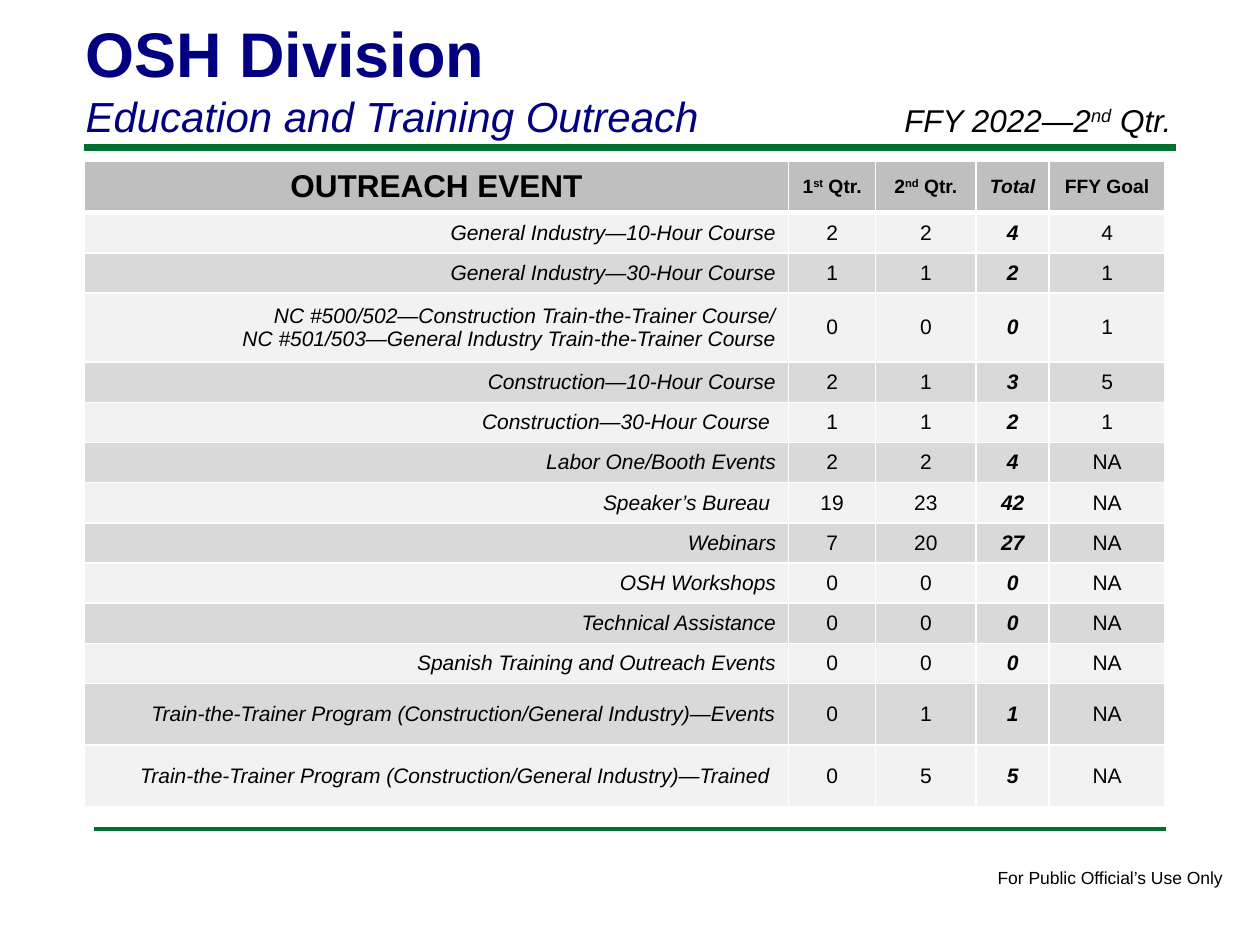
import dataclasses

import pptx
import pptx.dml.color
import pptx.enum.shapes
import pptx.enum.text
import pptx.oxml
import pptx.oxml.ns
import pptx.util

Cm, Pt = pptx.util.Cm, pptx.util.Pt
Align, Anchor = pptx.enum.text.PP_ALIGN, pptx.enum.text.MSO_ANCHOR
GROW = pptx.enum.text.MSO_AUTO_SIZE.SHAPE_TO_FIT_TEXT


@dataclasses.dataclass(frozen=True)
class Theme:
    """Colours, font and type sizes of the deck."""
    font: str = "Arial"
    ink: str = "000000"
    navy: str = "000080"
    green: str = "007030"
    border: str = "FFFFFF"
    header: str = "BFBFBF"
    bands: tuple = ("F2F2F2", "D9D9D9")
    title: int = 36
    subtitle: int = 24
    heading: int = 18
    body: int = 12
    column: int = 11
    footer: int = 10


THEME = Theme()
COLUMNS = (14.2, 1.75, 2.03, 1.47, 2.34)
HEADER_HEIGHT, ROW_HEIGHT, DOUBLE_HEIGHT, PROGRAM_HEIGHT = 1.04, 0.81, 1.39, 1.24
HEADINGS = ("OUTREACH EVENT", "1^st^ Qtr.", "2^nd^ Qtr.", "Total", "FFY Goal")
EVENTS = (
    ("General Industry—10-Hour Course", 2, 2, 4, 4),
    ("General Industry—30-Hour Course", 1, 1, 2, 1),
    ("NC #500/502—Construction Train-the-Trainer Course/\n"
     "NC #501/503—General Industry Train-the-Trainer Course", 0, 0, 0, 1),
    ("Construction—10-Hour Course", 2, 1, 3, 5),
    ("Construction—30-Hour Course ", 1, 1, 2, 1),
    ("Labor One/Booth Events", 2, 2, 4, "NA"),
    ("Speaker’s Bureau ", 19, 23, 42, "NA"),
    ("Webinars", 7, 20, 27, "NA"),
    ("OSH Workshops", 0, 0, 0, "NA"),
    ("Technical Assistance", 0, 0, 0, "NA"),
    ("Spanish Training and Outreach Events", 0, 0, 0, "NA"),
    ("Train-the-Trainer Program (Construction/General Industry)—Events", 0, 1, 1, "NA"),
    ("Train-the-Trainer Program (Construction/General Industry)—Trained ", 0, 5, 5, "NA"),
)


def rgb(colour):
    """Turn a hex string into a colour."""
    return pptx.dml.color.RGBColor.from_string(colour)


def write(para, text, size, colour=THEME.ink, bold=False, italic=False, align=Align.LEFT):
    """Fill a paragraph, raising the parts between carets."""
    para.alignment = align
    for index, part in enumerate(text.split("^")):
        span = para.add_run()
        span.text = part
        span.font.name, span.font.size = THEME.font, Pt(size)
        span.font.bold, span.font.italic = bold, italic
        span.font.color.rgb = rgb(colour)
        if index % 2:
            span.font._element.set("baseline", "30000")


def add_title(page, left, top, width, height):
    """Place the title and its subtitle in the title placeholder."""
    box = page.shapes.title
    box.left, box.top, box.width, box.height = Cm(left), Cm(top), Cm(width), Cm(height)
    frame = box.text_frame
    frame.word_wrap, frame.auto_size = True, GROW
    frame.vertical_anchor = Anchor.MIDDLE
    write(frame.paragraphs[0], "OSH Division", THEME.title, THEME.navy, bold=True)
    write(frame.add_paragraph(), "Education and Training Outreach",
          THEME.subtitle, THEME.navy, italic=True)


def add_label(page, left, top, width, height, text, size, italic=False, wrap=True):
    """Place a one-line text box."""
    frame = page.shapes.add_textbox(Cm(left), Cm(top), Cm(width), Cm(height)).text_frame
    frame.word_wrap, frame.auto_size = wrap, GROW
    write(frame.paragraphs[0], text, size, italic=italic)


def add_rule(page, left, top, width, weight):
    """Draw a horizontal green rule."""
    rule = page.shapes.add_connector(pptx.enum.shapes.MSO_CONNECTOR.STRAIGHT,
                                     Cm(left), Cm(top), Cm(left + width), Cm(top))
    rule.line.color.rgb, rule.line.width = rgb(THEME.green), Pt(weight)
    rule._element.spPr.append(
        pptx.oxml.parse_xml(f"<a:effectLst {pptx.oxml.ns.nsdecls('a')}/>"))


def style_cell(cell, fill, top, bottom):
    """Fill a cell and draw its borders."""
    cell.vertical_anchor = Anchor.MIDDLE
    cell.fill.solid()
    cell.fill.fore_color.rgb = rgb(fill)
    properties = cell._tc.get_or_add_tcPr()
    for index, (side, weight) in enumerate((("L", 1), ("R", 1), ("T", top), ("B", bottom))):
        properties.insert(index, pptx.oxml.parse_xml(
            f'<a:ln{side} {pptx.oxml.ns.nsdecls("a")} w="{Pt(weight)}"><a:solidFill>'
            f'<a:srgbClr val="{THEME.border}"/></a:solidFill></a:ln{side}>'))


def row_height(event):
    """Choose a row height from the event's name."""
    if "\n" in event:
        return DOUBLE_HEIGHT
    return PROGRAM_HEIGHT if event.startswith("Train-the-Trainer") else ROW_HEIGHT


def add_outreach_table(page, left, top):
    """Build the table of outreach events by quarter."""
    heights = [HEADER_HEIGHT] + [row_height(event[0]) for event in EVENTS]
    table = page.shapes.add_table(len(heights), len(COLUMNS), Cm(left), Cm(top),
                                  Cm(sum(COLUMNS)), Cm(sum(heights))).table
    for column, width in zip(table.columns, COLUMNS):
        column.width = Cm(width)
    for row, height in zip(table.rows, heights):
        row.height = Cm(height)
    for index, heading in enumerate(HEADINGS):
        cell = table.cell(0, index)
        style_cell(cell, THEME.header, 1, 3)
        write(cell.text_frame.paragraphs[0], heading,
              THEME.column if index else THEME.heading,
              bold=True, italic=heading == "Total", align=Align.CENTER)
    for number, event in enumerate(EVENTS, 1):
        for index, value in enumerate(event):
            cell = table.cell(number, index)
            style_cell(cell, THEME.bands[(number - 1) % 2], 3 if number == 1 else 1, 1)
            frame = cell.text_frame
            total = HEADINGS[index] == "Total"
            for line, text in enumerate(str(value).split("\n")):
                para = frame.add_paragraph() if line else frame.paragraphs[0]
                write(para, text, THEME.body, bold=total, italic=total or index == 0,
                      align=Align.CENTER if index else Align.RIGHT)


def add_outreach_page(deck):
    """Add the education and training outreach slide."""
    page = deck.slides.add_slide(deck.slide_layouts.get_by_name("Title Only"))
    add_rule(page, 1.7, 2.97, 22, 4)
    add_rule(page, 1.9, 16.71, 21.6, 2)
    add_label(page, 19.86, 17.35, 5.11, 0.69, "For Public Official’s Use Only",
              THEME.footer, wrap=False)
    add_title(page, 1.47, 0.15, 22.43, 2.82)
    add_outreach_table(page, 1.7, 3.25)
    add_label(page, 17.98, 1.91, 6.35, 1.02, "FFY 2022—2^nd^ Qtr.", THEME.heading, italic=True)


def main():
    """Build and save the deck."""
    deck = pptx.Presentation()
    deck.slide_width, deck.slide_height = Cm(25.4), Cm(19.05)
    add_outreach_page(deck)
    deck.save("out.pptx")


if __name__ == "__main__":
    main()
